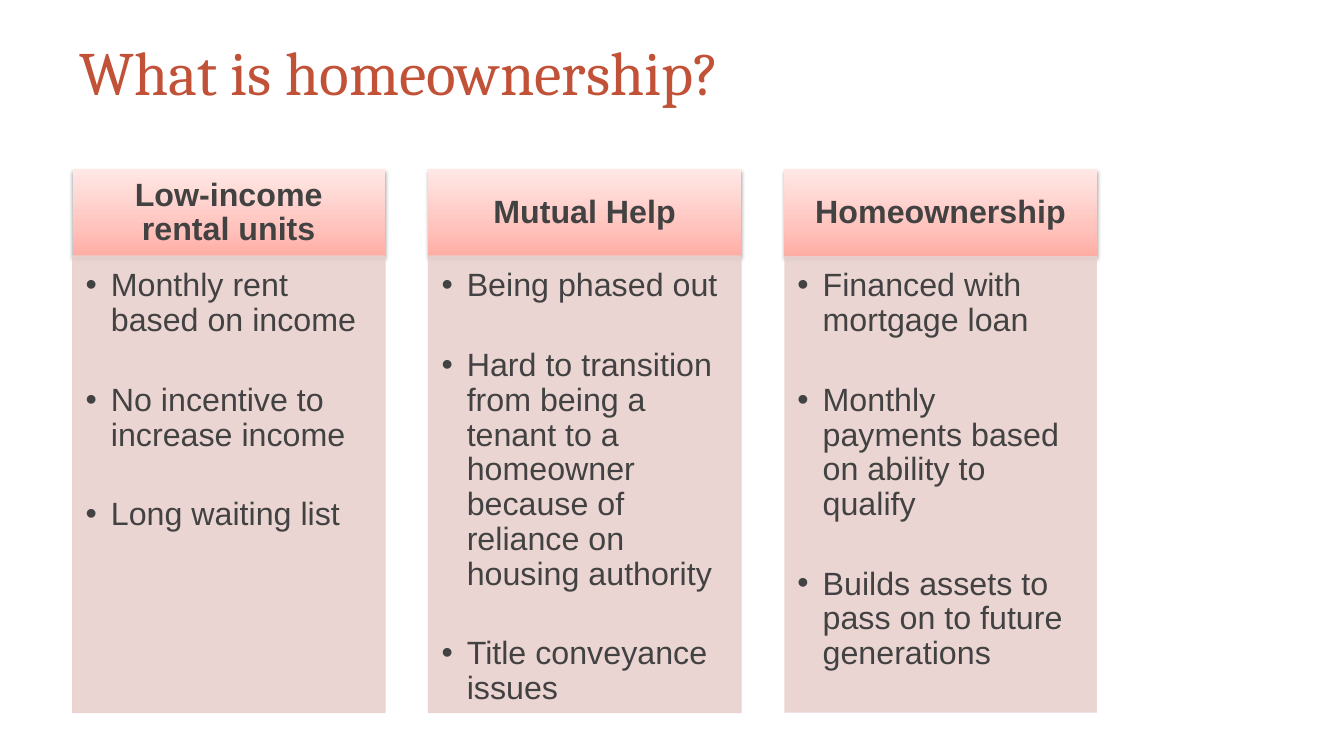
from copy import deepcopy
from dataclasses import dataclass

from lxml import etree
from pptx import Presentation
from pptx import util as u
from pptx.dml.color import RGBColor
from pptx.enum import shapes, text
from pptx.oxml import ns


@dataclass(frozen=True)
class Theme:
    title: str = "C15238"
    ink: str = "424242"
    panel: str = "E9D1CE"
    shadow: str = "000000"
    header: tuple = ((0, "FFACA3"), (0.35, "FFC4BE"), (1, "FFE8E6"))
    title_font: str = "Cambria"
    body_font: str = "Arial"
    title_size: int = 44
    body_size: int = 23


theme = Theme()


def add_xml(parent, tag, **attributes):
    return etree.SubElement(parent, ns.qn(tag), attributes)


def set_text(box, lines, insets, font_name, size, color, bold=False, bulleted=False):
    frame = box.text_frame
    frame.word_wrap = True
    frame.vertical_anchor = text.MSO_ANCHOR.TOP if bulleted else text.MSO_ANCHOR.MIDDLE
    frame.margin_left, frame.margin_top, frame.margin_right, frame.margin_bottom = map(u.Inches, insets)
    for index, line in enumerate(lines):
        para = frame.paragraphs[0] if index == 0 else frame.add_paragraph()
        para.text = line
        para.line_spacing = 0.9
        para.alignment = text.PP_ALIGN.CENTER if bold else text.PP_ALIGN.LEFT
        if bulleted:
            para.space_after = u.Pt(32)
            properties = para._p.get_or_add_pPr()
            properties.set("marL", str(u.Inches(0.25)))
            properties.set("indent", str(u.Inches(-0.25)))
            add_xml(properties, "a:buFont", typeface="Arial")
            add_xml(properties, "a:buChar", char="•")
        para.font.name = font_name
        para.font.size = u.Pt(size)
        para.font.bold = bold
        para.font.color.rgb = RGBColor.from_string(color)


deck = Presentation()
deck.slide_width, deck.slide_height = u.Inches(13.33), u.Inches(7.5)
page = deck.slides.add_slide(deck.slide_layouts[6])

title = page.shapes.add_textbox(u.Inches(0.69), u.Inches(0.02), u.Inches(10.16), u.Inches(1.45))
set_text(title, ["What is homeownership?"], (0.1, 0.05, 0.1, 0.05),
         theme.title_font, theme.title_size, theme.title)

columns = [
    ("Low-income rental units", [
        "Monthly rent based on income",
        "No incentive to increase income",
        "Long waiting list",
    ]),
    ("Mutual Help", [
        "Being phased out",
        "Hard to transition from being a tenant to a homeowner because of reliance on housing authority",
        "Title conveyance issues",
    ]),
    ("Homeownership", [
        "Financed with mortgage loan",
        "Monthly payments based on ability to qualify",
        "Builds assets to pass on to future generations",
    ]),
]

for number, (heading, points) in enumerate(columns):
    left, width = u.Inches(0.72 + 3.53 * number), u.Inches(3.1)

    header = page.shapes.add_shape(shapes.MSO_SHAPE.RECTANGLE, left, u.Inches(1.68), width, u.Inches(0.87))
    header.fill.gradient()
    header.fill.gradient_angle = 90
    first_stop = next(header._element.spPr.iter(ns.qn("a:gs")))
    first_stop.addnext(deepcopy(first_stop))
    for stop, (position, color) in zip(header.fill.gradient_stops, theme.header):
        stop.position = position
        stop.color.rgb = RGBColor.from_string(color)
    header.line.fill.background()
    header.shadow.inherit = False
    effects = header._element.spPr.find(ns.qn("a:effectLst"))
    shadow = add_xml(effects, "a:outerShdw", blurRad=str(u.Pt(3.1)), dist=str(u.Pt(1.6)),
                     dir="5400000", rotWithShape="0")
    shadow_color = add_xml(shadow, "a:srgbClr", val=theme.shadow)
    add_xml(shadow_color, "a:alpha", val="38000")
    set_text(header, [heading], (0.18, 0.1, 0.18, 0.1),
             theme.body_font, theme.body_size, theme.ink, bold=True)

    panel = page.shapes.add_shape(shapes.MSO_SHAPE.RECTANGLE, left, u.Inches(2.54), width, u.Inches(4.53))
    panel.shadow.inherit = False
    panel.fill.solid()
    panel.fill.fore_color.rgb = RGBColor.from_string(theme.panel)
    if number < len(columns) - 1:
        panel.line.color.rgb = RGBColor.from_string(theme.panel)
        panel.line.width = u.Pt(0.75)
    else:
        panel.line.fill.background()
    for color in panel._element.spPr.iter(ns.qn("a:srgbClr")):
        add_xml(color, "a:alpha", val="90000")
    set_text(panel, points, (0.13, 0.13, 0.18, 0.2),
             theme.body_font, theme.body_size, theme.ink, bulleted=True)

deck.save("out.pptx")
